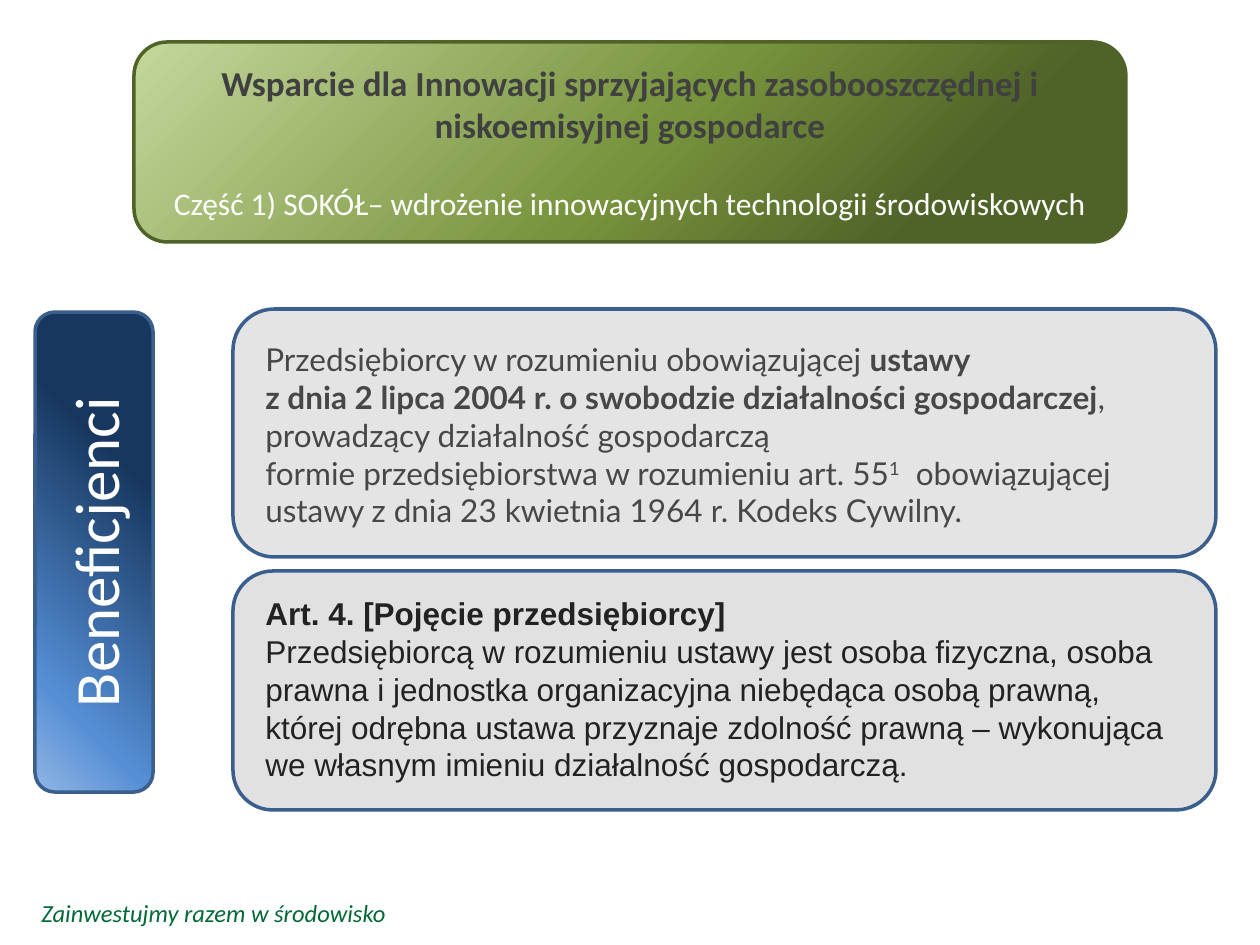
"""Build the slide on beneficiaries of the environmental innovation programme."""
from lxml.etree import SubElement
from pptx import Presentation
from pptx.dml.color import RGBColor
from pptx.enum.shapes import MSO_SHAPE
from pptx.enum.text import MSO_ANCHOR, MSO_AUTO_SIZE, PP_ALIGN
from pptx.oxml import parse_xml
from pptx.oxml.ns import nsdecls, qn
from pptx.util import Pt

PX = 914400 / 126
SLIDE_SIZE = (1260, 945)
BORDER = "3A5F8C"

HEADER = {
    "box": (134, 42, 992, 200),
    "stops": [(19, "4F6228"), (48, "77933C"), (99, "C3D69B")],
    "border": "4F6228",
    "paragraphs": [
        [("Wsparcie dla Innowacji sprzyjających zasobooszczędnej i niskoemisyjnej gospodarce",
          {"size": 20, "bold": True, "color": "404040"})],
        [("Część 1) SOKÓŁ– wdrożenie innowacyjnych technologii środowiskowych",
          {"size": 18, "color": "FFFFFF"})],
    ],
    "gap": 22,
}
SIDEBAR = {
    "box": (-146, 493, 480, 118),
    "stops": [(30, "17375E"), (80, "558ED5"), (99, "8EB4E3")],
    "paragraphs": [[("Beneficjenci", {"size": 36, "color": "FFFFFF"})]],
}
CARDS = [
    {
        "box": (233, 309, 983, 248), "text_top": 334, "opacity": 70,
        "base": {"name": "Lato", "size": 18, "color": "474747"},
        "paragraphs": [
            [("Przedsiębiorcy w rozumieniu obowiązującej ", {}), ("ustawy", {"bold": True})],
            [("z dnia 2 lipca 2004 r. o swobodzie działalności gospodarczej", {"bold": True}),
             (", prowadzący działalność gospodarczą", {})],
            [("formie przedsiębiorstwa w rozumieniu art. 55", {}),
             ("1", {"baseline": 30}),
             ("  obowiązującej ustawy z dnia 23 kwietnia 1964 r. Kodeks Cywilny.", {})],
        ],
    },
    {
        "box": (233, 571, 983, 239), "text_top": 588, "opacity": 77,
        "base": {"name": "Arial", "size": 18, "color": "222222"},
        "paragraphs": [
            [("Art. 4. [Pojęcie przedsiębiorcy]", {"bold": True})],
            [("Przedsiębiorcą w rozumieniu ustawy jest osoba fizyczna, osoba prawna i jednostka "
              "organizacyjna niebędąca osobą prawną, której odrębna ustawa przyznaje zdolność "
              "prawną – wykonująca we własnym imieniu działalność gospodarczą.", {})],
        ],
    },
]
CARD_PADDING = 20
FOOTER = {
    "box": (29, 892, 532, 43),
    "paragraphs": [[("Zainwestujmy razem w środowisko",
                     {"size": 14, "italic": True, "color": "026937"})]],
}


def emu(box):
    return [round(length * PX) for length in box]


def rgb(value):
    return RGBColor.from_string(value)


def write(shape, paragraphs, base=None, align=PP_ALIGN.LEFT, anchor=MSO_ANCHOR.TOP, gap=0):
    frame = shape.text_frame
    settings = {"word_wrap": True, "auto_size": MSO_AUTO_SIZE.NONE, "vertical_anchor": anchor}
    for name, value in settings.items():
        setattr(frame, name, value)
    for index, runs in enumerate(paragraphs):
        paragraph = frame.add_paragraph() if index else frame.paragraphs[0]
        paragraph.alignment = align
        paragraph.space_before = Pt(gap if index else 0)
        for text, changes in runs:
            run = paragraph.add_run()
            run.text = text
            style = {"name": "Calibri", "bold": False, **(base or {}), **changes}
            run.font.color.rgb = rgb(style.pop("color"))
            style["size"] = Pt(style["size"])
            baseline = style.pop("baseline", 0)
            for name, value in style.items():
                setattr(run.font, name, value)
            if baseline:
                run.font._element.set("baseline", str(baseline * 1000))


def add_panel(slide, box, border=BORDER):
    shape = slide.shapes.add_shape(MSO_SHAPE.ROUNDED_RECTANGLE, *emu(box))
    shape.shadow.inherit = False
    shape.line.color.rgb = rgb(border)
    shape.line.width = Pt(2)
    return shape


def fill_gradient(shape, stops):
    marks = "".join(f'<a:gs pos="{position * 1000}"><a:srgbClr val="{color}"/></a:gs>'
                    for position, color in stops)
    gradient = parse_xml(f'<a:gradFill {nsdecls("a")} rotWithShape="1"><a:gsLst>{marks}</a:gsLst>'
                         '<a:lin ang="13500000" scaled="1"/></a:gradFill>')
    shape._element.spPr.find(qn("a:prstGeom")).addnext(gradient)


def fill_translucent(shape, color, opacity):
    shape.fill.solid()
    shape.fill.fore_color.rgb = rgb(color)
    color_element = shape._element.spPr.find(qn("a:solidFill")).find(qn("a:srgbClr"))
    SubElement(color_element, qn("a:alpha"), val=str(opacity * 1000))


def add_text(slide, box, paragraphs, base=None):
    write(slide.shapes.add_textbox(*emu(box)), paragraphs, base)


def main():
    presentation = Presentation()
    presentation.slide_width, presentation.slide_height = emu(SLIDE_SIZE)
    slide = presentation.slides.add_slide(presentation.slide_layouts[5])
    centred = {"align": PP_ALIGN.CENTER, "anchor": MSO_ANCHOR.MIDDLE}

    add_text(slide, FOOTER["box"], FOOTER["paragraphs"])

    sidebar = add_panel(slide, SIDEBAR["box"])
    sidebar.rotation = 270
    fill_gradient(sidebar, SIDEBAR["stops"])
    write(sidebar, SIDEBAR["paragraphs"], **centred)

    for card in CARDS:
        left, top, width, height = card["box"]
        fill_translucent(add_panel(slide, card["box"]), "D9D9D9", card["opacity"])
        text_box = (left + CARD_PADDING, card["text_top"], width - 2 * CARD_PADDING,
                    height - 2 * (card["text_top"] - top))
        add_text(slide, text_box, card["paragraphs"], card["base"])

    header = add_panel(slide, HEADER["box"], HEADER["border"])
    fill_gradient(header, HEADER["stops"])
    title = slide.shapes.title
    title.left, title.top, title.width, title.height = emu(HEADER["box"])
    write(title, HEADER["paragraphs"], gap=HEADER["gap"], **centred)
    header._element.addnext(title._element)

    presentation.save("out.pptx")


if __name__ == "__main__":
    main()
